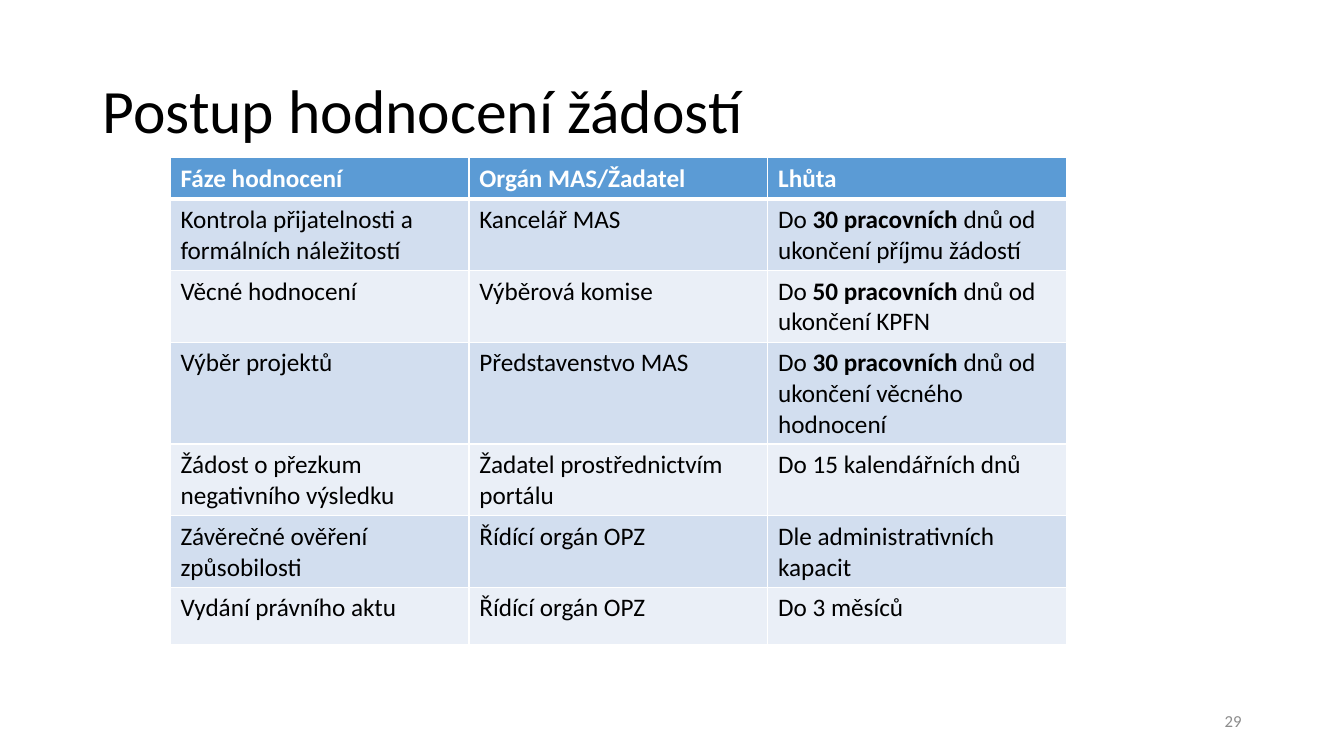
from lxml import etree
from pptx import Presentation
from pptx.dml.color import RGBColor
from pptx.enum.text import MSO_ANCHOR as Anchor, MSO_AUTO_SIZE as AutoSize, PP_ALIGN as Align
from pptx.oxml.ns import qn
from pptx.util import Cm, Pt

BLACK = RGBColor(0x00, 0x00, 0x00)
WHITE = RGBColor(0xFF, 0xFF, 0xFF)
GRAY = RGBColor(0x8C, 0x8C, 0x8C)
HEADER_BLUE = RGBColor(0x5B, 0x9B, 0xD5)
BANDS = (RGBColor(0xD2, 0xDE, 0xEF), RGBColor(0xEA, 0xEF, 0xF7))

# Each cell is a text, or a list of texts in which every second one is bold
ROWS = [
    ("Fáze hodnocení", "Orgán MAS/Žadatel", "Lhůta"),
    ("Kontrola přijatelnosti a formálních náležitostí", "Kancelář MAS",
     ["Do ", "30 pracovních ", "dnů od ukončení příjmu žádostí"]),
    ("Věcné hodnocení", "Výběrová komise",
     ["Do ", "50 pracovních ", "dnů od ukončení KPFN"]),
    ("Výběr projektů", "Představenstvo MAS",
     ["Do ", "30 pracovních ", "dnů od ukončení věcného hodnocení"]),
    ("Žádost o přezkum negativního výsledku", "Žadatel prostřednictvím portálu",
     "Do 15 kalendářních dnů"),
    ("Závěrečné ověření způsobilosti", "Řídící orgán OPZ", "Dle administrativních kapacit"),
    ("Vydání právního aktu", "Řídící orgán OPZ", "Do 3 měsíců"),
]
ROW_HEIGHTS = (0.84, 1.45, 1.45, 2.08, 1.45, 1.45, 1.45)
COLUMN_WIDTH = 7.53


class SlideBuilder:
    font_name = "Calibri"

    def __init__(self, presentation):
        self.slide = presentation.slides.add_slide(presentation.slide_layouts[5])

    def style(self, paragraph, size, color, bold=False):
        font = paragraph.font
        font.name, font.size, font.bold = self.font_name, Pt(size), bold
        font.color.rgb = color

    def title(self, text, left, top, width, height):
        shape = self.slide.shapes.title
        shape.left, shape.top, shape.width, shape.height = map(Cm, (left, top, width, height))
        frame = shape.text_frame
        frame.text = text
        frame.auto_size = AutoSize.NONE
        frame.vertical_anchor = Anchor.MIDDLE
        paragraph = frame.paragraphs[0]
        paragraph.alignment = Align.LEFT
        paragraph.line_spacing = 0.9
        self.style(paragraph, 44, BLACK)

    def page_number(self, text, left, top, width, height):
        frame = self.slide.shapes.add_textbox(*map(Cm, (left, top, width, height))).text_frame
        frame.word_wrap = True
        frame.vertical_anchor = Anchor.MIDDLE
        frame.text = text
        frame.paragraphs[0].alignment = Align.RIGHT
        self.style(frame.paragraphs[0], 12, GRAY)

    def borders(self, cell, top, bottom):
        properties = cell._tc.get_or_add_tcPr()
        for side, points in (("L", 1), ("R", 1), ("T", top), ("B", bottom)):
            line = etree.SubElement(properties, qn(f"a:ln{side}"), w=str(Pt(points)))
            fill = etree.SubElement(line, qn("a:solidFill"))
            etree.SubElement(fill, qn("a:srgbClr"), val=str(WHITE))

    def cell(self, cell, content, row):
        header = row == 0
        self.borders(cell, top=3 if row == 1 else 1, bottom=3 if header else 1)
        cell.margin_left = cell.margin_right = Cm(0.26)
        cell.margin_top = cell.margin_bottom = Cm(0.14)
        cell.fill.solid()
        cell.fill.fore_color.rgb = HEADER_BLUE if header else BANDS[(row - 1) % 2]
        paragraph = cell.text_frame.paragraphs[0]
        self.style(paragraph, 18, WHITE if header else BLACK, header)
        parts = [content] if isinstance(content, str) else content
        for index, text in enumerate(parts):
            run = paragraph.add_run()
            run.text = text
            if index % 2:
                run.font.bold = True

    def table(self, rows, left, top, column_width, row_heights):
        columns = len(rows[0])
        table = self.slide.shapes.add_table(
            len(rows), columns, Cm(left), Cm(top),
            Cm(column_width * columns), Cm(sum(row_heights))).table
        table.horz_banding = False
        for column in table.columns:
            column.width = Cm(column_width)
        for row, (contents, height) in enumerate(zip(rows, row_heights)):
            table.rows[row].height = Cm(height)
            for column, content in enumerate(contents):
                self.cell(table.cell(row, column), content, row)


def main():
    presentation = Presentation()
    presentation.slide_width, presentation.slide_height = Cm(33.87), Cm(19.05)
    builder = SlideBuilder(presentation)

    # Title and page number
    builder.title("Postup hodnocení žádostí", 2.33, 1.01, 29.21, 3.68)
    builder.page_number("29", 23.92, 17.66, 7.62, 1.01)

    # Evaluation phases
    builder.table(ROWS, 4.29, 3.97, COLUMN_WIDTH, ROW_HEIGHTS)

    presentation.save("out.pptx")


if __name__ == "__main__":
    main()
